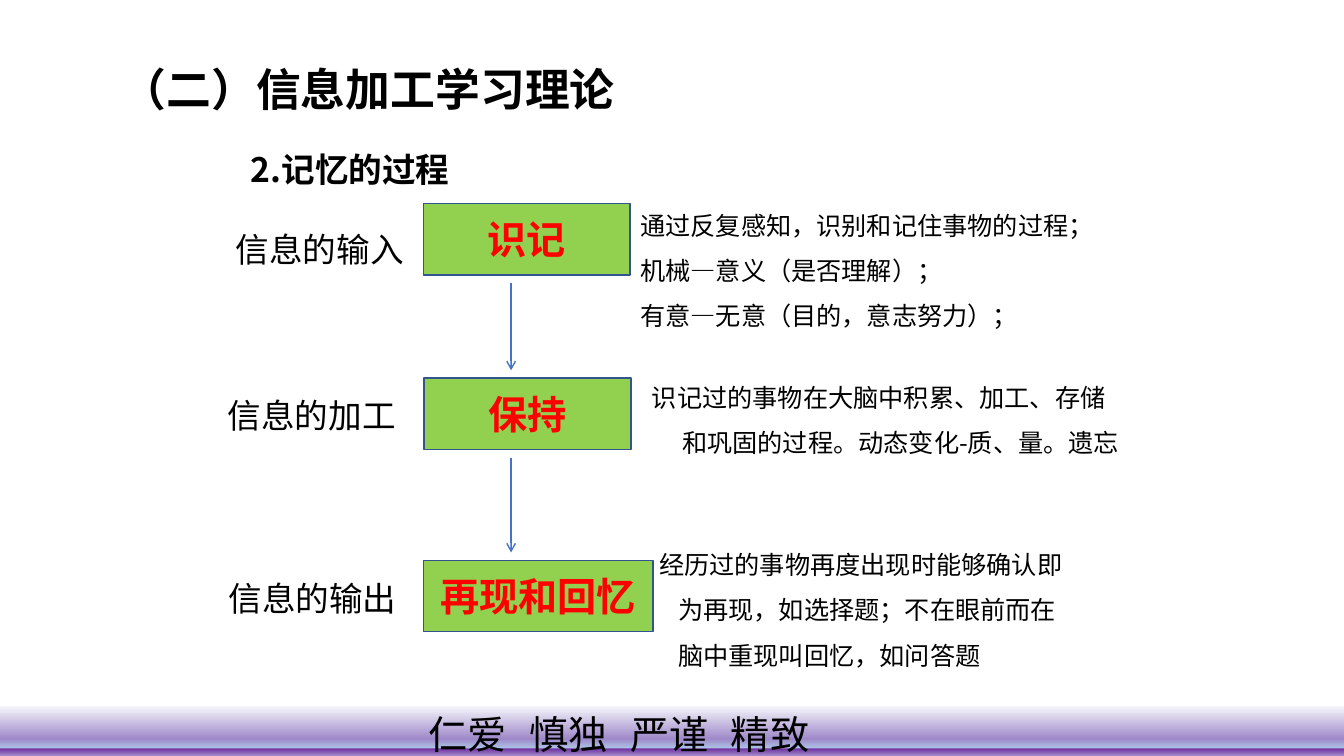
from dataclasses import dataclass

import pptx
import pptx.dml.color
import pptx.enum.shapes
import pptx.enum.text
import pptx.oxml.ns
import pptx.shapes.autoshape
import pptx.slide
import pptx.util
from lxml import etree
from pptx.util import Cm

RGBColor = pptx.dml.color.RGBColor
Anchor = pptx.enum.text.MSO_ANCHOR
Align = pptx.enum.text.PP_ALIGN
qn = pptx.oxml.ns.qn

BLACK = RGBColor(0x00, 0x00, 0x00)
RED = RGBColor(0xFF, 0x00, 0x00)
GREEN = RGBColor(0x92, 0xD0, 0x50)
BOX_BORDER = RGBColor(0x32, 0x54, 0x91)
ARROW_BLUE = RGBColor(0x44, 0x72, 0xC4)
FONT = "Noto Sans CJK SC"
HANGING = 0.76
BOX_HEIGHT = 1.8
ARROW_X = 12.88

FOOTER_WORDS = ["仁爱", "慎独", "严谨", "精致"]
FOOTER_TEXT_LEFT = 10.8
FOOTER_TABS = [3.5, 6.8, 10.35]
FOOTER_GRADIENT = [
    (0, RGBColor(0xF6, 0xF8, 0xFC)),
    (58, RGBColor(0x9F, 0x89, 0xC9)),
    (74, RGBColor(0xAB, 0xC0, 0xE4)),
    (75, RGBColor(0x70, 0x30, 0xA0)),
    (93, RGBColor(0xB7, 0xB5, 0xDE)),
    (96, RGBColor(0xC3, 0xCB, 0xE8)),
    (98, RGBColor(0xC9, 0xD6, 0xED)),
    (99, RGBColor(0xCD, 0xDF, 0xF1)),
    (100, RGBColor(0xC7, 0xD5, 0xED)),
]


@dataclass(frozen=True)
class Area:
    """A rectangle on the slide, in centimetres."""
    left: float
    top: float
    width: float
    height: float


@dataclass(frozen=True)
class Stage:
    name: str
    box: Area
    label: str
    label_area: Area
    description: list[str]
    description_area: Area
    first_indent: float = -HANGING


STAGES = [
    Stage("识记", Area(10.67, 5.13, 5.21, BOX_HEIGHT),
          "信息的输入", Area(5.69, 5.13, 6.17, BOX_HEIGHT),
          ["通过反复感知，识别和记住事物的过程；",
           "机械—意义（是否理解）；",
           "有意—无意（目的，意志努力）；"],
          Area(15.88, 4.78, 13.82, 3.71)),
    Stage("保持", Area(10.69, 9.53, 5.21, BOX_HEIGHT),
          "信息的加工", Area(5.49, 9.32, 6.17, BOX_HEIGHT),
          ["识记过的事物在大脑中积累、加工、存储和巩固的过程。动态变化-质、量。遗忘"],
          Area(16.18, 9.12, 12.4, 2.57)),
    Stage("再现和回忆", Area(10.67, 14.12, 5.79, BOX_HEIGHT),
          "信息的输出", Area(5.51, 13.92, 6.17, BOX_HEIGHT),
          ["经历过的事物再度出现时能够确认即为再现，如选择题；不在眼前而在脑中重现叫回忆，如问答题"],
          Area(16.08, 13.34, 11, 3.56), first_indent=-0.48),
]


def place(shape: pptx.shapes.autoshape.Shape, area: Area) -> None:
    shape.left, shape.top = Cm(area.left), Cm(area.top)
    shape.width, shape.height = Cm(area.width), Cm(area.height)


def write(shape: pptx.shapes.autoshape.Shape, lines: list[str], *, size: float,
          color: RGBColor = BLACK, bold: bool = False,
          align: Align = Align.LEFT, anchor: Anchor = Anchor.TOP,
          line_spacing: float = 1.0, margin: float = 0,
          first_indent: float = 0, tabs: tuple[float, ...] = ()) -> None:
    """Fill a shape with one paragraph per line; indents and tabs are in centimetres."""
    frame = shape.text_frame
    frame.word_wrap = True
    frame.auto_size = pptx.enum.text.MSO_AUTO_SIZE.NONE
    frame.vertical_anchor = anchor
    for index, line in enumerate(lines):
        paragraph = frame.paragraphs[0] if index == 0 else frame.add_paragraph()
        properties = paragraph._p.get_or_add_pPr()
        properties.set("marL", str(Cm(margin)))
        properties.set("indent", str(Cm(first_indent)))
        etree.SubElement(properties, qn("a:buNone"))
        if tabs:
            tab_list = etree.SubElement(properties, qn("a:tabLst"))
            for tab in tabs:
                etree.SubElement(tab_list, qn("a:tab"), pos=str(Cm(tab)), algn="l")
        paragraph.alignment = align
        paragraph.line_spacing = line_spacing
        paragraph.space_before = pptx.util.Pt(0)
        run = paragraph.add_run()
        run.text = line
        run.font.size = pptx.util.Pt(size)
        run.font.bold = bold
        run.font.color.rgb = color
        run.font.name = FONT
        etree.SubElement(run._r.get_or_add_rPr(), qn("a:ea"), typeface=FONT)


def add_text(slide: pptx.slide.Slide, area: Area, text: list[str], *, size: float,
             bold: bool = False, first_indent: float = -HANGING) -> None:
    box = slide.shapes.add_textbox(0, 0, 0, 0)
    place(box, area)
    write(box, text, size=size, bold=bold, line_spacing=1.5,
          margin=HANGING, first_indent=first_indent)


def add_rectangle(slide: pptx.slide.Slide, area: Area) -> pptx.shapes.autoshape.Shape:
    rectangle = slide.shapes.add_shape(
        pptx.enum.shapes.MSO_SHAPE.RECTANGLE, 0, 0, 0, 0)
    place(rectangle, area)
    rectangle.shadow.inherit = False
    return rectangle


def add_footer(slide: pptx.slide.Slide) -> None:
    footer = add_rectangle(slide, Area(0, 17.78, 33.87, 1.45))
    footer.line.fill.background()
    footer.fill.gradient()
    footer.fill.gradient_angle = 270
    stops = footer._element.spPr.find(qn("a:gradFill")).find(qn("a:gsLst"))
    for stop in list(stops):
        stops.remove(stop)
    for percent, color in FOOTER_GRADIENT:
        stop = etree.SubElement(stops, qn("a:gs"), pos=str(percent * 1000))
        etree.SubElement(stop, qn("a:srgbClr"), val=str(color))
    footer.text_frame.margin_left = Cm(FOOTER_TEXT_LEFT)
    write(footer, ["\t".join(FOOTER_WORDS)], size=28, tabs=tuple(FOOTER_TABS))


def add_stage_box(slide: pptx.slide.Slide, stage: Stage) -> None:
    box = add_rectangle(slide, stage.box)
    box.fill.solid()
    box.fill.fore_color.rgb = GREEN
    box.line.color.rgb = BOX_BORDER
    box.line.width = pptx.util.Pt(1)
    write(box, [stage.name], size=28, color=RED, bold=True,
          align=Align.CENTER, anchor=Anchor.MIDDLE)


def add_down_arrow(slide: pptx.slide.Slide, top: float, bottom: float) -> None:
    arrow = slide.shapes.add_connector(
        pptx.enum.shapes.MSO_CONNECTOR.STRAIGHT,
        Cm(ARROW_X), Cm(top), Cm(ARROW_X), Cm(bottom))
    arrow.line.color.rgb = ARROW_BLUE
    arrow.line.width = pptx.util.Pt(1)
    etree.SubElement(arrow.line._get_or_add_ln(), qn("a:tailEnd"), type="arrow")
    etree.SubElement(arrow._element.spPr, qn("a:effectLst"))


def main() -> None:
    presentation = pptx.Presentation()
    presentation.slide_width, presentation.slide_height = Cm(33.87), Cm(19.05)
    slide = presentation.slides.add_slide(presentation.slide_layouts[1])
    add_footer(slide)

    title = slide.shapes.title
    place(title, Area(0.76, 0.64, 17.05, 3.18))
    write(title, ["（二）信息加工学习理论"], size=32, bold=True,
          align=Align.CENTER, anchor=Anchor.MIDDLE)
    add_text(slide, Area(6.07, 3.12, 22, 1.8), ["2.记忆的过程"], size=24, bold=True)

    for stage in STAGES:
        add_stage_box(slide, stage)
        add_text(slide, stage.label_area, [stage.label], size=24)

    input_stage, *later_stages = STAGES
    body = slide.placeholders[1]
    place(body, input_stage.description_area)
    write(body, input_stage.description, size=18, line_spacing=1.5,
          margin=HANGING, first_indent=input_stage.first_indent)
    for stage in later_stages:
        add_text(slide, stage.description_area, stage.description, size=18,
                 first_indent=stage.first_indent)

    for upper, lower in zip(STAGES, later_stages):
        add_down_arrow(slide, upper.box.top + BOX_HEIGHT + 0.2, lower.box.top - 0.2)

    presentation.save("out.pptx")


if __name__ == "__main__":
    main()
